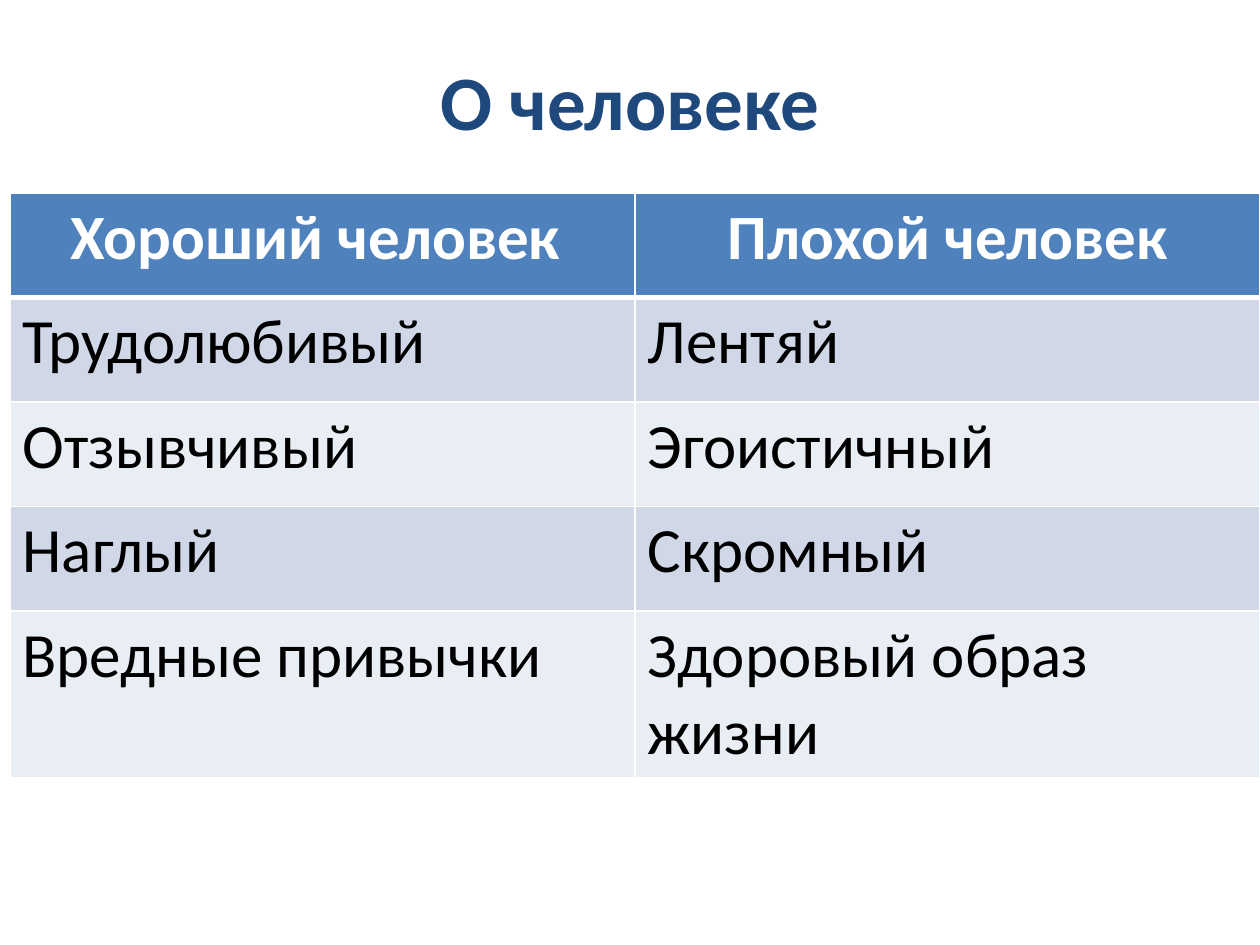
"""Build a slide that compares traits of a good and a bad person."""
from dataclasses import dataclass

import pptx
import pptx.dml.color
import pptx.enum.text
import pptx.oxml
import pptx.oxml.ns
import pptx.util

Inches = pptx.util.Inches
Align = pptx.enum.text.PP_ALIGN
Anchor = pptx.enum.text.MSO_ANCHOR


@dataclass(frozen=True)
class Theme:
    font: str = "Calibri"
    title: str = "1F497D"
    head: str = "4F81BD"
    bands: tuple[str, str] = ("D0D8E8", "E9EDF4")
    light: str = "FFFFFF"
    dark: str = "000000"
    big: int = 44
    body: int = 36
    thin: int = 1
    thick: int = 3


@dataclass(frozen=True)
class Pair:
    good: str
    bad: str


THEME = Theme()
PAIRS = [
    Pair("Хороший человек ", "Плохой человек"),
    Pair("Трудолюбивый", "Лентяй"),
    Pair("Отзывчивый", "Эгоистичный"),
    Pair("Наглый", "Скромный"),
    Pair("Вредные привычки", "Здоровый образ жизни"),
]


def add_text(frame, text: str, size: int, color: str, bold: bool, align) -> None:
    par = frame.paragraphs[0]
    par.alignment = align
    run = par.add_run()
    run.text = text
    font = run.font
    font.name, font.size, font.bold = THEME.font, pptx.util.Pt(size), bold
    font.color.rgb = pptx.dml.color.RGBColor.from_string(color)


def set_edges(cell, widths: dict[str, int]) -> None:
    props = cell._tc.get_or_add_tcPr()
    for place, (side, width) in enumerate(widths.items()):
        props.insert(place, pptx.oxml.parse_xml(
            f'<a:ln{side} {pptx.oxml.ns.nsdecls("a")} w="{pptx.util.Pt(width)}">'
            f'<a:solidFill><a:srgbClr val="{THEME.light}"/></a:solidFill>'
            f'</a:ln{side}>'))


def fill_cell(cell, text: str, row: int) -> None:
    head = row == 0
    color = THEME.head if head else THEME.bands[(row - 1) % 2]
    cell.fill.solid()
    cell.fill.fore_color.rgb = pptx.dml.color.RGBColor.from_string(color)
    add_text(cell.text_frame, text, THEME.body,
             THEME.light if head else THEME.dark, head,
             Align.CENTER if head else Align.LEFT)
    set_edges(cell, {"L": THEME.thin, "R": THEME.thin,
                     "T": THEME.thick if row == 1 else THEME.thin,
                     "B": THEME.thick if head else THEME.thin})


def add_title(slide, text: str) -> None:
    title = slide.shapes.title
    title.left, title.top = Inches(0.5), Inches(0.17)
    title.width, title.height = Inches(9), Inches(1.25)
    title.text_frame.vertical_anchor = Anchor.MIDDLE
    add_text(title.text_frame, text, THEME.big, THEME.title, True, Align.CENTER)


def add_pairs(slide, pairs: list[Pair]) -> None:
    table = slide.shapes.add_table(
        len(pairs), 2, Inches(0.08), Inches(1.53),
        Inches(9.92), Inches(0.83 * len(pairs))).table
    for row, pair in enumerate(pairs):
        for col, text in enumerate((pair.good, pair.bad)):
            fill_cell(table.cell(row, col), text, row)


def main() -> None:
    deck = pptx.Presentation()
    deck.slide_width, deck.slide_height = Inches(10), Inches(7.5)
    slide = deck.slides.add_slide(deck.slide_layouts[5])
    add_title(slide, "О человеке")
    add_pairs(slide, PAIRS)
    deck.save("out.pptx")


if __name__ == "__main__":
    main()
